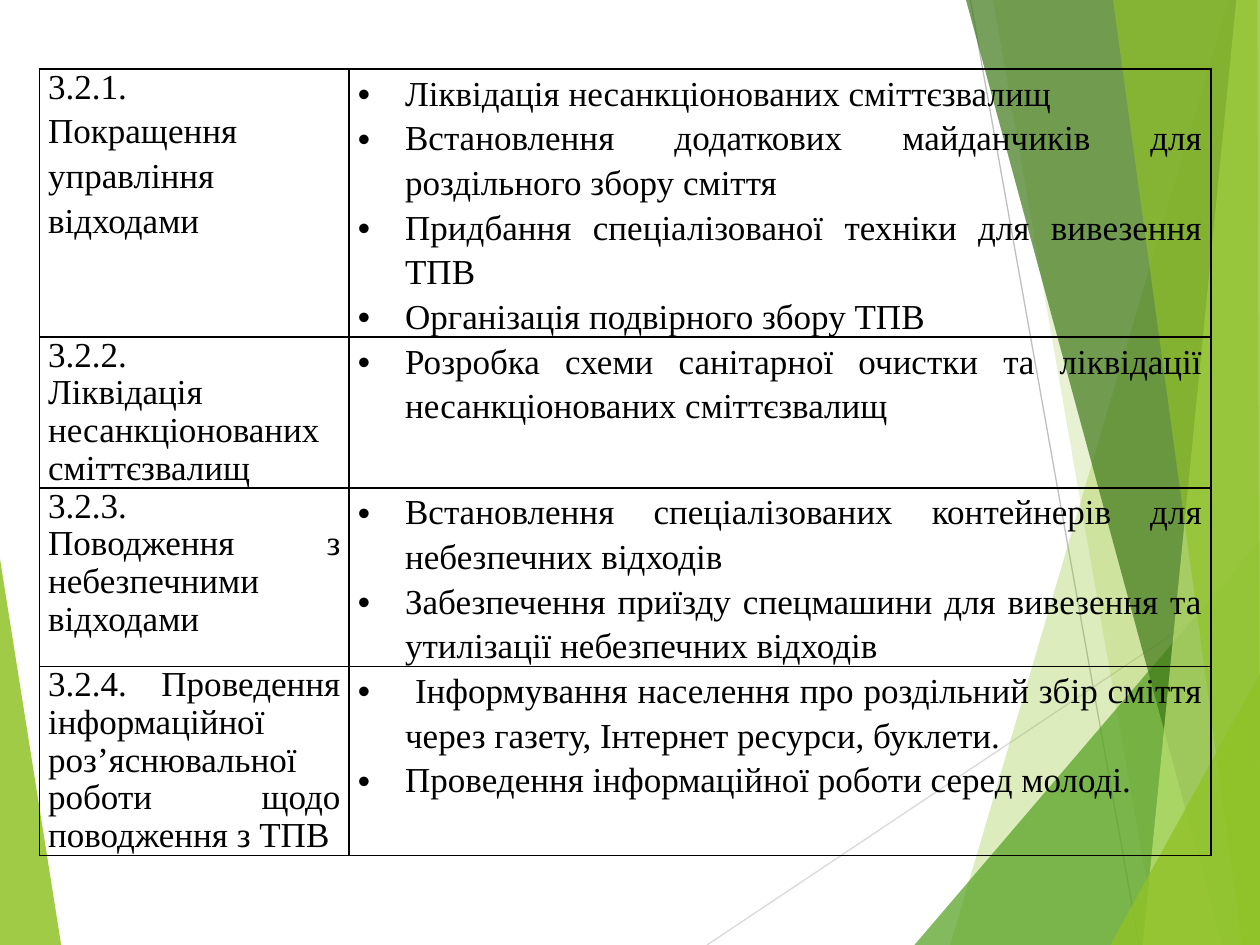
from lxml import etree
from pptx import Presentation
from pptx.dml.color import RGBColor
from pptx.enum.shapes import MSO_CONNECTOR
from pptx.enum.text import PP_ALIGN
from pptx.oxml.ns import qn
from pptx.util import Pt

STRAIGHT = MSO_CONNECTOR.STRAIGHT
JUSTIFY = PP_ALIGN.JUSTIFY
LEFT = PP_ALIGN.LEFT
FONT = "Times New Roman"
BLACK = "000000"
TIGHT, LOOSE = 0.97, 1.15
HANGING = Pt(27)

RAYS = [
    ((404, 540), (720, 329), "D9D9D9"),
    ((554.5, 0), (651, 540), "BFBFBF"),
]
LEFT_SHARD = ([(-0.5, 316), (35, 540), (-0.5, 540)], "90C226", 85)
RIGHT_SHARDS = [
    ([(702, 0), (543, 540), (720, 540), (720, 0)], "90C226", 30),
    ([(567.5, 0), (661.5, 540), (720, 540), (720, 0)], "90C226", 20),
    ([(522.5, 540), (720, 309), (720, 540)], "54A021", 72),
    ([(552, 0), (698.5, 540), (720, 540), (720, 0)], "3F7819", 70),
    ([(706.5, 0), (653, 540), (720, 540), (720, 0)], "C0E474", 70),
    ([(636, 0), (710, 540), (720, 540), (718.5, 0)], "90C226", 65),
    ([(634.5, 540), (720, 385), (720, 540)], "90C226", 80),
]

COLUMN_SHARES = [177, 492.5]
MEASURES = [
    (153, [("3.2.1.", JUSTIFY, TIGHT, 0),
           ("Покращення управління відходами", LEFT, LOOSE, 0)],
     ["Ліквідація несанкціонованих сміттєзвалищ",
      "Встановлення додаткових майданчиків для роздільного збору сміття",
      "Придбання спеціалізованої техніки для вивезення ТПВ",
      "Організація подвірного збору ТПВ"]),
    (86, [("3.2.2.", JUSTIFY, TIGHT, 0),
          ("Ліквідація несанкціонованих сміттєзвалищ", JUSTIFY, TIGHT, 10)],
     ["Розробка схеми санітарної очистки та ліквідації несанкціонованих сміттєзвалищ"]),
    (102, [("3.2.3.", JUSTIFY, TIGHT, 0),
           ("Поводження з небезпечними відходами", JUSTIFY, TIGHT, 0)],
     ["Встановлення спеціалізованих контейнерів для небезпечних відходів",
      "Забезпечення приїзду спецмашини для вивезення та утилізації небезпечних відходів"]),
    (108, [("3.2.4. Проведення інформаційної роз’яснювальної роботи щодо поводження з ТПВ",
            JUSTIFY, TIGHT, 0)],
     [" Інформування населення про роздільний збір сміття через газету, Інтернет ресурси, буклети.",
      "Проведення інформаційної роботи серед молоді."]),
]


def color(hex_code):
    return RGBColor.from_string(hex_code)


def add_shard(slide, left, top, corners, tint, opacity):
    points = [(Pt(left + x), Pt(top + y)) for x, y in corners]
    builder = slide.shapes.build_freeform(*points[0])
    builder.add_line_segments(points[1:], close=True)
    shard = builder.convert_to_shape()
    shard.shadow.inherit = False
    shard.fill.solid()
    shard.fill.fore_color.rgb = color(tint)
    shard.line.fill.background()
    tint_xml = shard.fill._xPr.find(qn("a:solidFill"))[0]
    etree.SubElement(tint_xml, qn("a:alpha"), val=str(opacity * 1000))


def add_backdrop(slide, left, top):
    add_shard(slide, left, top, *LEFT_SHARD)
    for (x1, y1), (x2, y2), tint in RAYS:
        ray = slide.shapes.add_connector(
            STRAIGHT, Pt(left + x1), Pt(top + y1), Pt(left + x2), Pt(top + y2))
        ray.line.color.rgb = color(tint)
        ray.line.width = Pt(0.75)
        etree.SubElement(ray._element.spPr, qn("a:effectLst"))
    for shard in RIGHT_SHARDS:
        add_shard(slide, left, top, *shard)


def style_cell(cell):
    cell.margin_left = cell.margin_right = Pt(5)
    cell.margin_top = cell.margin_bottom = 0
    cell.fill.background()
    properties = cell._tc.get_or_add_tcPr()
    for position, side in enumerate(("a:lnL", "a:lnR", "a:lnT", "a:lnB")):
        border = etree.Element(qn(side), w=str(Pt(1)))
        ink = etree.SubElement(border, qn("a:solidFill"))
        etree.SubElement(ink, qn("a:srgbClr"), val=BLACK)
        properties.insert(position, border)


def fill_cell(cell, entries, bulleted):
    style_cell(cell)
    cell.text_frame.text = "\n".join(entry[0] for entry in entries)
    for paragraph, entry in zip(cell.text_frame.paragraphs, entries):
        _, paragraph.alignment, paragraph.line_spacing, space_after = entry
        paragraph.space_after = Pt(space_after)
        for run in paragraph.runs:
            run.font.name = FONT
            run.font.size = Pt(20)
            run.font.color.rgb = color(BLACK)
        if bulleted:
            properties = paragraph._p.get_or_add_pPr()
            properties.set("marL", str(HANGING))
            properties.set("indent", str(-HANGING))
            etree.SubElement(properties, qn("a:buFont"), typeface="Arial")
            etree.SubElement(properties, qn("a:buChar"), char="•")


def add_measures_table(slide, left, top, width, height):
    table = slide.shapes.add_table(
        len(MEASURES), len(COLUMN_SHARES), Pt(left), Pt(top), Pt(width), Pt(height)).table
    table.first_row = table.horz_banding = False
    for column, share in zip(table.columns, COLUMN_SHARES):
        column.width = Pt(width * share / sum(COLUMN_SHARES))
    total = sum(measure[0] for measure in MEASURES)
    for index, (share, goal, tasks) in enumerate(MEASURES):
        table.rows[index].height = Pt(height * share / total)
        fill_cell(table.cell(index, 0), goal, False)
        fill_cell(table.cell(index, 1), [(task, JUSTIFY, LOOSE, 0) for task in tasks], True)


def main():
    presentation = Presentation()
    presentation.slide_width, presentation.slide_height = Pt(720), Pt(540)
    slide = presentation.slides.add_slide(presentation.slide_layouts[6])
    add_backdrop(slide, 0, 0)
    add_measures_table(slide, 22.5, 39.5, 669.5, 449)
    presentation.save("out.pptx")


if __name__ == "__main__":
    main()
